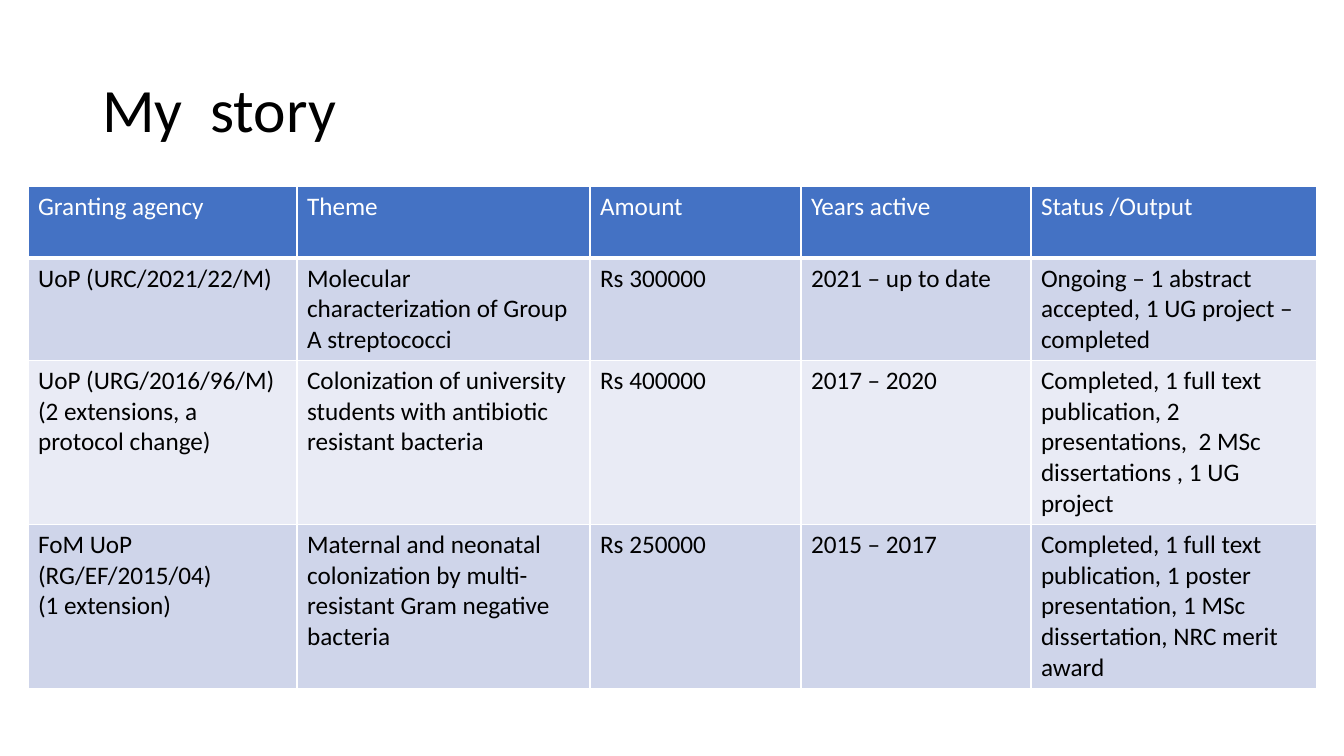
from lxml.etree import SubElement
from pptx import Presentation
from pptx.dml.color import RGBColor
from pptx.enum.text import MSO_ANCHOR, PP_ALIGN
from pptx.oxml.ns import qn
from pptx.util import Pt

# Content
TITLE = "My  story"
ROWS = [
    ["Granting agency", "Theme", "Amount", "Years active", "Status /Output"],
    ["UoP (URC/2021/22/M)",
     "Molecular characterization of Group A streptococci",
     "Rs 300000", "2021 – up to date",
     "Ongoing – 1 abstract accepted, 1 UG project – completed"],
    ["UoP (URG/2016/96/M)\n(2 extensions, a protocol change)",
     "Colonization of university students with antibiotic resistant bacteria",
     "Rs 400000", "2017 – 2020",
     "Completed, 1 full text publication, 2 presentations,  2 MSc dissertations , 1 UG project"],
    ["FoM UoP (RG/EF/2015/04)\n(1 extension)",
     "Maternal and neonatal colonization by multi-resistant Gram negative bacteria",
     "Rs 250000", "2015 – 2017",
     "Completed, 1 full text publication, 1 poster presentation, 1 MSc dissertation, NRC merit award"],
]

# Layout in px
COL_WIDTHS = [269, 293, 211, 230, 286]
ROW_HEIGHTS = [72, 102, 164, 164]
TABLE_LEFT, TABLE_TOP = 28, 186

FONT = "Calibri"
HEADER_FILL, BAND_FILLS = "4472C4", ["CFD5EA", "E9EBF5"]
WHITE, BLACK = "FFFFFF", "000000"


def px(n):
    return round(n * 914400 / 100.8)


def rgb(color):
    return RGBColor.from_string(color)


def style_text(p, size, color):
    p.font.name = FONT
    p.font.size = Pt(size)
    p.font.bold = False
    p.font.color.rgb = rgb(color)


def add_border(cell, side, width):
    ln = SubElement(cell._tc.get_or_add_tcPr(), qn(f"a:ln{side}"), w=str(Pt(width)))
    fill = SubElement(ln, qn("a:solidFill"))
    SubElement(fill, qn("a:srgbClr"), val=WHITE)


prs = Presentation()
prs.slide_width, prs.slide_height = px(1344), px(756)
s = prs.slides.add_slide(prs.slide_layouts[5])

# Title
title = s.shapes.title
title.left, title.top, title.width, title.height = px(92), px(40), px(1159), px(146)
tf = title.text_frame
tf.text = TITLE
tf.vertical_anchor = MSO_ANCHOR.MIDDLE
p = tf.paragraphs[0]
p.alignment = PP_ALIGN.LEFT
p.line_spacing = 0.9
style_text(p, 44, BLACK)

# Grants table
table = s.shapes.add_table(
    len(ROWS), len(COL_WIDTHS), px(TABLE_LEFT), px(TABLE_TOP),
    px(sum(COL_WIDTHS)), px(sum(ROW_HEIGHTS))).table
for col, width in zip(table.columns, COL_WIDTHS):
    col.width = px(width)
for row, height in zip(table.rows, ROW_HEIGHTS):
    row.height = px(height)

for i, texts in enumerate(ROWS):
    header = i == 0
    for j, text in enumerate(texts):
        cell = table.cell(i, j)
        cell.text = text
        for p in cell.text_frame.paragraphs:
            style_text(p, 18, WHITE if header else BLACK)
        # The rule under the header is thicker
        widths = {"L": 1, "R": 1, "T": 3 if i == 1 else 1, "B": 3 if header else 1}
        for side, width in widths.items():
            add_border(cell, side, width)
        cell.fill.solid()
        cell.fill.fore_color.rgb = rgb(HEADER_FILL if header else BAND_FILLS[(i - 1) % 2])

prs.save("out.pptx")
